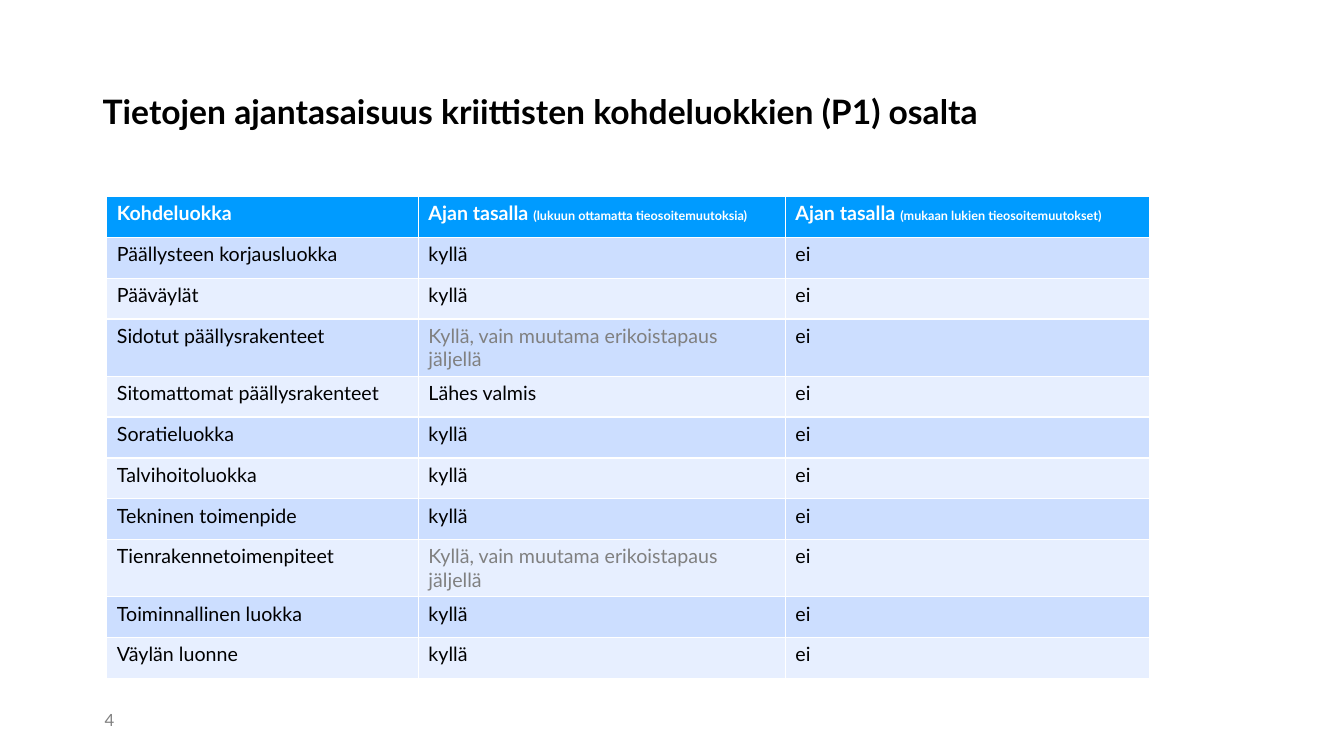
from pptx import Presentation
from pptx.dml.color import RGBColor
from pptx.enum.text import MSO_ANCHOR
from pptx.util import Inches, Pt

COLORS = {"text": "000000", "muted": "808080", "header": "009BFF", "header_text": "FFFFFF",
          "band_dark": "CCDEFF", "band_light": "E7EFFF"}
FONT = "Lato"
COLUMN_WIDTHS = [3.09, 3.64, 3.61]
NEARLY_DONE = "Kyllä, vain muutama erikoistapaus jäljellä"
HEADERS = [("Kohdeluokka", ""),
           ("Ajan tasalla ", "(lukuun ottamatta tieosoitemuutoksia)"),
           ("Ajan tasalla ", "(mukaan lukien tieosoitemuutokset)")]
STATUSES = [("Päällysteen korjausluokka", "kyllä"),
            ("Pääväylät", "kyllä"),
            ("Sidotut päällysrakenteet", NEARLY_DONE),
            ("Sitomattomat päällysrakenteet", "Lähes valmis"),
            ("Soratieluokka", "kyllä"),
            ("Talvihoitoluokka", "kyllä"),
            ("Tekninen toimenpide", "kyllä"),
            ("Tienrakennetoimenpiteet", NEARLY_DONE),
            ("Toiminnallinen luokka", "kyllä"),
            ("Väylän luonne", "kyllä")]


def add_run(p, text, size, color, bold=False):
    r = p.add_run()
    r.text = text
    r.font.name = FONT
    r.font.size = Pt(size)
    r.font.bold = bold
    r.font.color.rgb = RGBColor.from_string(COLORS[color])


def add_label(s, box, text, size, color, bold=False):
    tf = s.shapes.add_textbox(*map(Inches, box)).text_frame
    tf.word_wrap = True
    tf.vertical_anchor = MSO_ANCHOR.MIDDLE
    p = tf.paragraphs[0]
    p.line_spacing = 0.9
    add_run(p, text, size, color, bold)


def fill_cell(cell, color):
    cell.fill.solid()
    cell.fill.fore_color.rgb = RGBColor.from_string(COLORS[color])
    return cell.text_frame.paragraphs[0]


def add_status_table(s, box):
    table = s.shapes.add_table(len(STATUSES) + 1, len(HEADERS), *map(Inches, box)).table
    for column, width in zip(table.columns, COLUMN_WIDTHS):
        column.width = Inches(box[2] * width / sum(COLUMN_WIDTHS))
    for col, (heading, note) in enumerate(HEADERS):
        p = fill_cell(table.cell(0, col), "header")
        add_run(p, heading, 14, "header_text", True)
        if note:
            add_run(p, note, 9, "header_text", True)
    for row, (name, status) in enumerate(STATUSES, 1):
        band = "band_dark" if row % 2 else "band_light"
        for col, text in enumerate((name, status, "ei")):
            p = fill_cell(table.cell(row, col), band)
            add_run(p, text, 14, "muted" if text == NEARLY_DONE else "text")


def main():
    prs = Presentation()
    prs.slide_width, prs.slide_height = Inches(13.33), Inches(7.5)
    s = prs.slides.add_slide(prs.slide_layouts[6])
    add_label(s, (0.92, 0.4, 10.49, 1.45),
              "Tietojen ajantasaisuus kriittisten kohdeluokkien (P1) osalta", 24, "text", True)
    add_status_table(s, (1.06, 1.95, 10.34, 4.46))
    add_label(s, (0.94, 6.95, 0.61, 0.4), "4", 12, "muted")
    prs.save("out.pptx")


if __name__ == "__main__":
    main()
